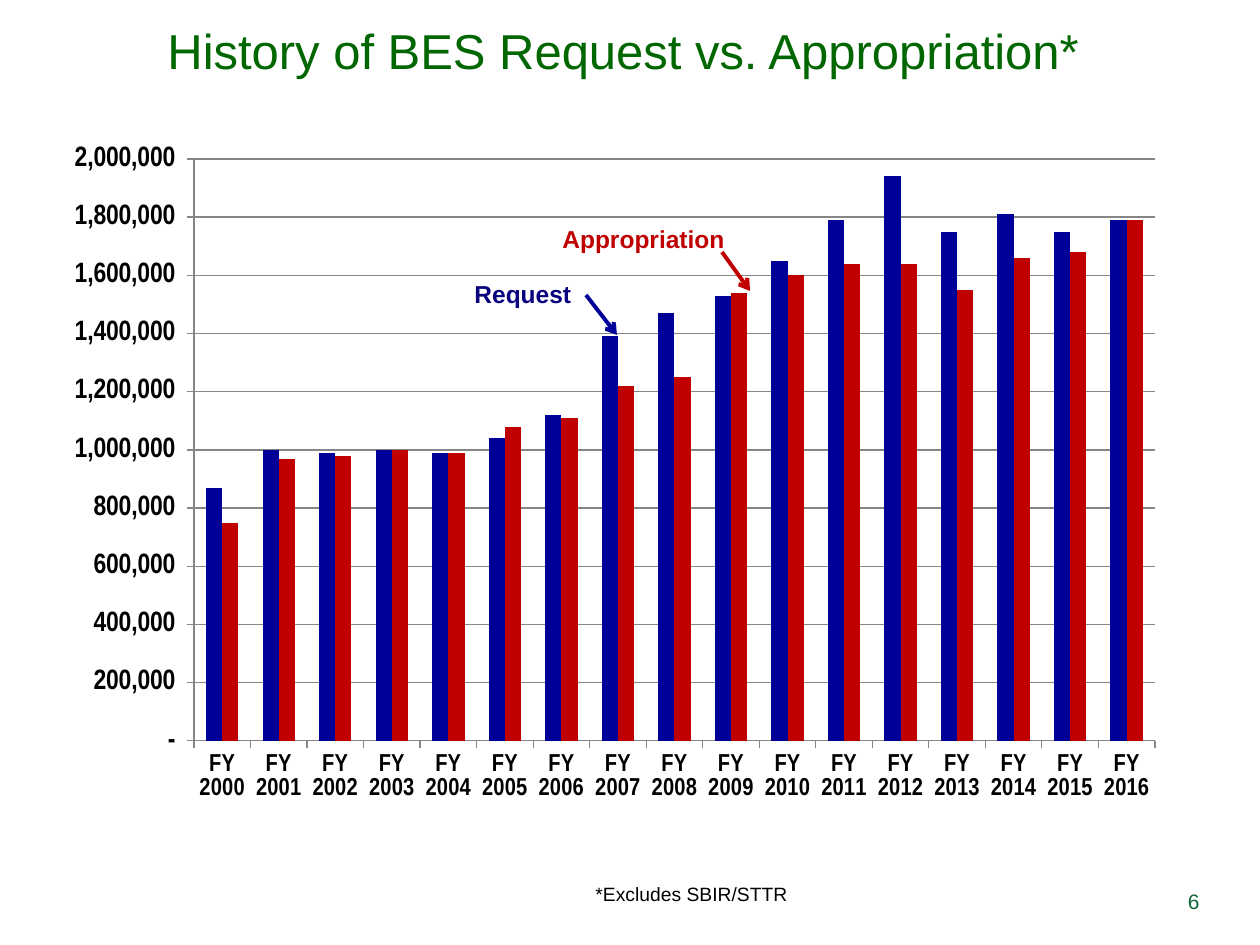
from lxml import etree
from pptx import Presentation
from pptx.chart.data import CategoryChartData
from pptx.dml.color import RGBColor
from pptx.enum.chart import XL_CHART_TYPE as CT, XL_TICK_MARK as TM
from pptx.enum.shapes import MSO_CONNECTOR as MC
from pptx.enum.text import MSO_ANCHOR as MA, PP_ALIGN as PA
from pptx.oxml import parse_xml
from pptx.oxml.ns import nsdecls, qn
from pptx.util import Emu, Pt

SCALE = 914400 / 126


def px(*values):
    return [Emu(round(v * SCALE)) for v in values]


def color(hex_string):
    return RGBColor.from_string(hex_string)


prs = Presentation()
prs.slide_width, prs.slide_height = px(1260, 945)
s = prs.slides.add_slide(prs.slide_layouts[5])

title = s.shapes.title
title.left, title.top, title.width, title.height = px(0, 0, 1246, 101)
tf = title.text_frame
tf.text = "History of BES Request vs. Appropriation*"
tf.vertical_anchor = MA.TOP
tf.margin_left, tf.margin_right, tf.margin_top, tf.margin_bottom = px(14, 14, 20, 20)
p = tf.paragraphs[0]
p.alignment = PA.CENTER
p.font.size, p.font.name = Pt(28), "Arial"
p.font.color.rgb = color("006600")

series = [
    ("Request", "000099", [870, 1000, 990, 1000, 990, 1040, 1120, 1390, 1470,
                           1530, 1650, 1790, 1940, 1750, 1810, 1750, 1790]),
    ("Appropriation", "C00000", [750, 970, 980, 1000, 990, 1080, 1110, 1220, 1250,
                                 1540, 1600, 1640, 1640, 1550, 1660, 1680, 1790]),
]
data = CategoryChartData()
data.categories = [f"FY {year}" for year in range(2000, 2017)]
for name, fill, thousands in series:
    data.add_series(name, [v * 1000 for v in thousands])
left, top, width, height = 45, 134, 1131, 682
chart = s.shapes.add_chart(CT.COLUMN_CLUSTERED, *px(left, top, width, height), data).chart
chart.has_legend = False
chart.has_title = False
chart.font.size, chart.font.name = Pt(10), "Calibri"
chart.font.color.rgb = color("000000")

plot = chart.plots[0]
plot.gap_width, plot.overlap = 150, 0
plot.vary_by_categories = False
for ser, (name, fill, thousands) in zip(plot.series, series):
    ser.format.fill.solid()
    ser.format.fill.fore_color.rgb = color(fill)
    ser.invert_if_negative = False

value_axis = chart.value_axis
value_axis.minimum_scale, value_axis.maximum_scale = 0, 2000000
value_axis.major_unit = 200000
value_axis.has_major_gridlines = True
value_axis.major_gridlines.format.line.color.rgb = color("868686")
value_axis.major_gridlines.format.line.width = Pt(0.75)
value_axis.tick_labels.number_format = '_(* #,##0_);_(* \\(#,##0\\);_(* "-"_);_(@_)'
value_axis.tick_labels.number_format_is_linked = False
for axis, size in [(chart.category_axis, 14), (value_axis, 16)]:
    axis.major_tick_mark = TM.OUTSIDE
    axis.format.line.color.rgb = color("868686")
    axis.format.line.width = Pt(0.75)
    font = axis.tick_labels.font
    font.size, font.bold, font.name = Pt(size), True, "Arial Narrow"
    font.color.rgb = color("000000")

area = chart.plots[0]._element.getparent()
for old in area.findall(qn("c:layout")):
    area.remove(old)
layout = parse_xml(f'<c:layout {nsdecls("c")}><c:manualLayout/></c:layout>')
settings = [("layoutTarget", "inner"), ("xMode", "edge"), ("yMode", "edge"),
            ("x", (194 - left) / width), ("y", (159 - top) / height),
            ("w", 961 / width), ("h", 582 / height)]
for tag, val in settings:
    etree.SubElement(layout[0], qn(f"c:{tag}")).set("val", str(val))
area.insert(0, layout)

labels = [
    ("6", (1159, 876, 53, 50), 12, "106636", False, PA.RIGHT, MA.MIDDLE, True),
    ("*Excludes SBIR/STTR", (583, 876, 219, 37), 11, "000000", False, PA.LEFT, MA.TOP, False),
    ("Request", (462, 273, 122, 43), 14, "08027E", True, PA.LEFT, MA.TOP, False),
    ("Appropriation", (550, 218, 189, 43), 14, "C00000", True, PA.LEFT, MA.TOP, False),
]
for text, box, size, fill, bold, align, anchor, wrap in labels:
    tf = s.shapes.add_textbox(*px(*box)).text_frame
    tf.word_wrap, tf.vertical_anchor = wrap, anchor
    p = tf.paragraphs[0]
    p.text, p.alignment = text, align
    p.font.size, p.font.bold, p.font.name = Pt(size), bold, "Arial"
    p.font.color.rgb = color(fill)

for ends, fill in [((586, 295, 617, 335), "000099"), ((722, 252, 750, 291), "C00000")]:
    arrow = s.shapes.add_connector(MC.STRAIGHT, *px(*ends))
    arrow.line.color.rgb = color(fill)
    arrow.line.width = Pt(2.25)
    etree.SubElement(arrow.line._get_or_add_ln(), qn("a:tailEnd")).set("type", "arrow")
    etree.SubElement(arrow._element.spPr, qn("a:effectLst"))

prs.save("out.pptx")
